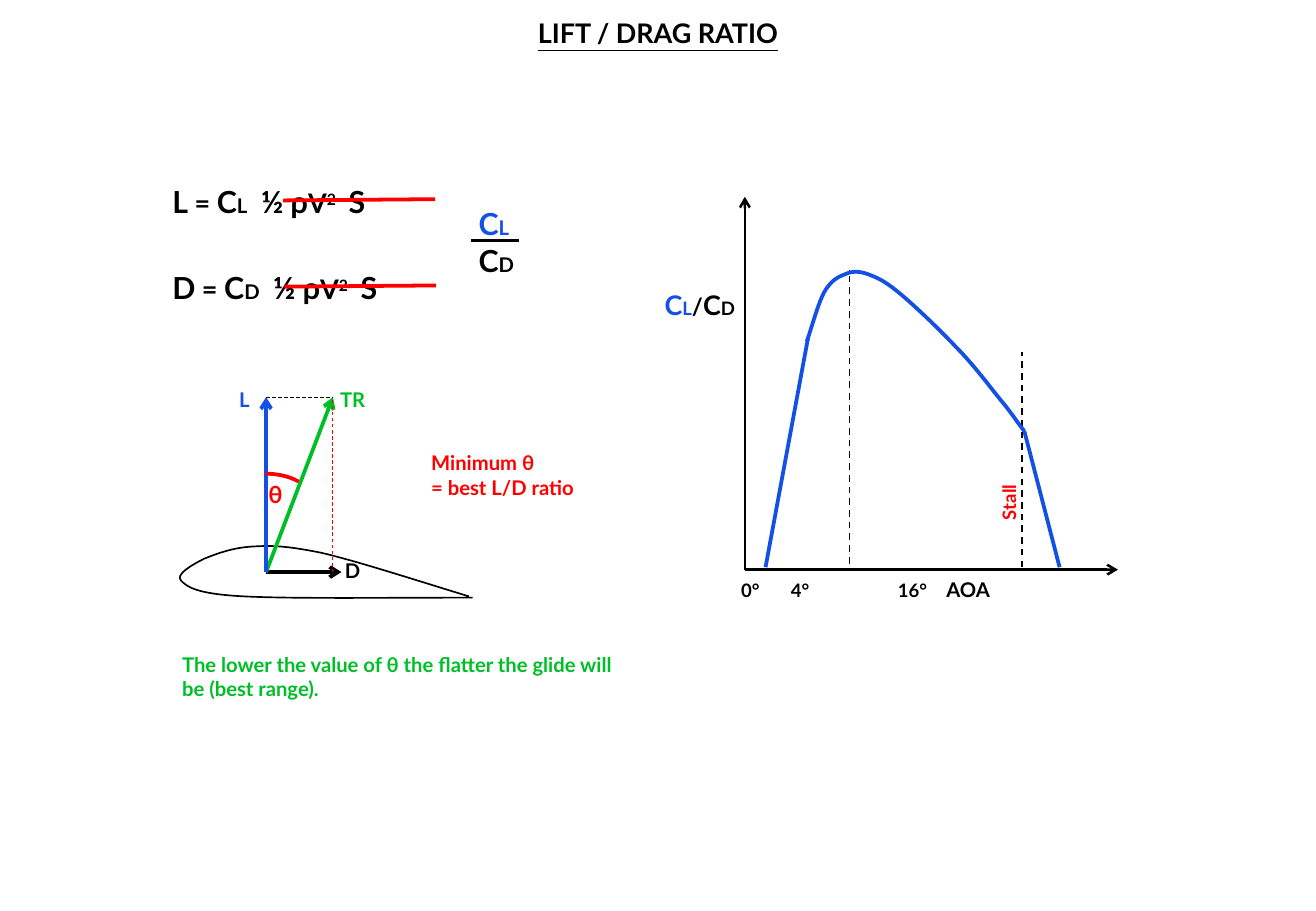
from lxml import etree
from pptx import Presentation
from pptx.dml.color import RGBColor
from pptx.enum.dml import MSO_LINE
from pptx.enum.shapes import MSO_CONNECTOR, MSO_SHAPE
from pptx.enum.text import MSO_AUTO_SIZE, PP_ALIGN
from pptx.oxml.ns import qn
from pptx.util import Inches, Pt

STRAIGHT, ARC = MSO_CONNECTOR.STRAIGHT, MSO_SHAPE.ARC
DASH, CENTER = MSO_LINE.DASH, PP_ALIGN.CENTER
GROW = MSO_AUTO_SIZE.SHAPE_TO_FIT_TEXT
FONT = "Lato"
BLACK, RED, BLUE, GREEN = "000000", "FF0000", "1450E6", "00BE28"

# Box (left, top, width, height), paragraphs of runs (text, size, colour)
TEXTS = [
    ((3.84, 1.64, 0.94, 0.71), [[("C", 18, BLUE), ("L", 12, BLUE)],
                                [("C", 18, BLACK), ("D", 12, BLACK)]]),
    ((2.11, 3.9, 0.71, 0.34), [[("θ", 14, RED)]]),
    ((1.87, 3.14, 0.31, 0.3), [[("L", 12, BLUE)]]),
    ((2.7, 3.14, 0.55, 0.3), [[("TR", 12, GREEN)]]),
    ((2.74, 4.55, 0.79, 0.3), [[("D", 12, BLACK)]]),
    ((3.45, 3.66, 2.29, 0.5), [[("Minimum θ", 12, RED)],
                               [("= best L/D ratio", 12, RED)]]),
    ((5.37, 2.33, 0.91, 0.37), [[("C", 16, BLUE), ("L", 11, BLUE), ("/", 14, BLACK),
                                 ("C", 16, BLACK), ("D", 11, BLACK)]]),
    ((1.4, 5.32, 3.78, 0.5), [[("The lower the value of θ the flatter the glide "
                                "will be (best range).", 12, GREEN)]]),
]
TITLE = "LIFT / DRAG RATIO"
# Force, top and width of box, tab stops, left end of the strike line
FORMULAS = [("L", 1.46, 2.26, (0.73, 1.45), 2.33),
            ("D", 2.17, 2.29, (0.83, 1.55), 2.34)]
SCALE = [("\t0°\t4°\t16°\t", 11, BLACK), ("AOA", 12, BLACK)]
SCALE_TABS = (0.11, 0.52, 1.4, 1.8)

# Corners of the force diagram and of the graph
ROOT, LIFT, TOTAL, FOOT = (2.19, 4.71), (2.19, 3.27), (2.74, 3.27), (2.74, 4.71)
ZERO, STALL = (6.13, 4.69), (8.43, 3.55)

# Start, end, colour, width, dashed, arrow
LINES = [
    ((3.88, 1.98), (4.27, 1.98), BLACK, 1.5, False, False),
    (ROOT, (2.81, 4.71), BLACK, 2.25, False, True),
    (ROOT, TOTAL, GREEN, 2.25, False, True),
    (FOOT, TOTAL, RED, 0.5, True, False),
    (LIFT, TOTAL, BLACK, 0.5, True, False),
    (ROOT, LIFT, BLUE, 2.25, False, True),
    (ZERO, (6.13, 1.62), BLACK, 1.5, False, True),
    (ZERO, (9.2, 4.69), BLACK, 1.5, False, True),
    ((6.3, 4.67), (6.65, 2.78), BLUE, 2.25, False, False),
    ((6.99, 4.64), (6.99, 2.22), BLACK, 1, True, False),
    (STALL, (8.72, 4.67), BLUE, 2.25, False, False),
    ((8.41, 4.67), (8.41, 2.9), BLACK, 1, True, False),
]

# Bezier points: a start, then two handles and an end for each piece
WING = [(3.89, 4.92), (3.15, 4.92), (2.4, 4.93), (2.01, 4.91),
        (1.61, 4.89), (1.54, 4.83), (1.49, 4.78),
        (1.44, 4.73), (1.58, 4.65), (1.68, 4.6),
        (1.78, 4.56), (1.91, 4.51), (2.07, 4.5),
        (2.23, 4.49), (2.34, 4.49), (2.64, 4.55),
        (2.94, 4.62), (3.4, 4.77), (3.86, 4.91)]
RATIO = [(6.64, 2.81), (6.69, 2.66), (6.73, 2.51), (6.78, 2.41),
         (6.83, 2.32), (6.89, 2.28), (6.95, 2.26),
         (7.01, 2.23), (7.07, 2.23), (7.15, 2.26),
         (7.23, 2.29), (7.29, 2.32), (7.41, 2.42),
         (7.53, 2.52), (7.73, 2.71), (7.87, 2.86),
         (8.01, 3), (8.15, 3.19), (8.24, 3.3),
         (8.34, 3.42), (8.38, 3.49), STALL]

prs = Presentation()
prs.slide_width, prs.slide_height = Inches(10.83), Inches(7.5)
slide = prs.slides.add_slide(prs.slide_layouts[6])
shapes = slide.shapes


def rgb(code):
    return RGBColor.from_string(code)


def text(box, paras, tabs=(), align=None):
    """Add a text box and return it."""
    shape = shapes.add_textbox(*map(Inches, box))
    frame = shape.text_frame
    frame.word_wrap = True
    frame.auto_size = GROW
    for i, runs in enumerate(paras):
        para = frame.add_paragraph() if i else frame.paragraphs[0]
        if align is not None:
            para.alignment = align
        if tabs:
            stops = etree.SubElement(para._p.get_or_add_pPr(), qn("a:tabLst"))
            for pos in tabs:
                etree.SubElement(stops, qn("a:tab"), pos=str(Inches(pos)), algn="l")
        for words, size, color in runs:
            run = para.add_run()
            run.text = words
            font = run.font
            font.name, font.size, font.bold = FONT, Pt(size), True
            font.color.rgb = rgb(color)
    return shape


def stroke(shape, color, width):
    shape.line.color.rgb = rgb(color)
    shape.line.width = Pt(width)


def line(start, end, color, width, dashed=False, arrow=False):
    link = shapes.add_connector(STRAIGHT, *map(Inches, start + end))
    stroke(link, color, width)
    if dashed:
        link.line.dash_style = DASH
    if arrow:
        etree.SubElement(link.line._get_or_add_ln(), qn("a:tailEnd"), type="arrow")
    etree.SubElement(link._element.spPr, qn("a:effectLst"))


def outline(shape, color, width):
    """Leave a shape with its line only."""
    shape.fill.background()
    shape.shadow.inherit = False
    stroke(shape, color, width)


def curve(knots, color, width):
    """Draw an open outline and bend each of its pieces into a Bezier curve."""
    dots = [tuple(map(Inches, knot)) for knot in knots]
    pen = shapes.build_freeform(*dots[0])
    pen.add_line_segments(dots[3::3], close=False)
    shape = pen.convert_to_shape()
    for i, piece in enumerate(list(shape._element.iter(qn("a:lnTo")))):
        bend = etree.Element(qn("a:cubicBezTo"))
        for x, y in dots[3 * i + 1:3 * i + 4]:
            etree.SubElement(bend, qn("a:pt"),
                             x=str(x - shape.left), y=str(y - shape.top))
        piece.getparent().replace(piece, bend)
    outline(shape, color, width)


curve(WING, BLACK, 1)
for item in LINES:
    line(*item)
curve(RATIO, BLUE, 2.25)

angle = shapes.add_shape(ARC, *map(Inches, (1.79, 3.9, 0.79, 0.47)))
angle.adjustments[0], angle.adjustments[1] = 162, 196.8
outline(angle, RED, 2.25)

for box, paras in TEXTS:
    text(box, paras)
text((5.89, 4.7, 3.46, 0.3), [SCALE], SCALE_TABS)
text((7.87, 3.8, 0.87, 0.29), [[("Stall", 11, RED)]]).rotation = 270
title = text((0, 0.09, 10.83, 0.37), [[(TITLE, 16, BLACK)]], align=CENTER)
title.text_frame.paragraphs[0].runs[0].font.underline = True

for force, top, wide, tabs, left in FORMULAS:
    words = [(force, 18), (" = ", 16), ("C", 18), (force, 12), ("\t", 16),
             ("½ ρ", 18), ("V", 16), ("2", 16), ("\t", 16), ("S", 18)]
    shape = text((1.32, top, wide, 0.4), [[(w, s, BLACK) for w, s in words]], tabs)
    power = shape.text_frame.paragraphs[0].runs[7]
    power.font._element.set("baseline", "30000")
    line((left, top + 0.19), (left + 1.25, top + 0.18), RED, 2.25)

prs.save("out.pptx")
